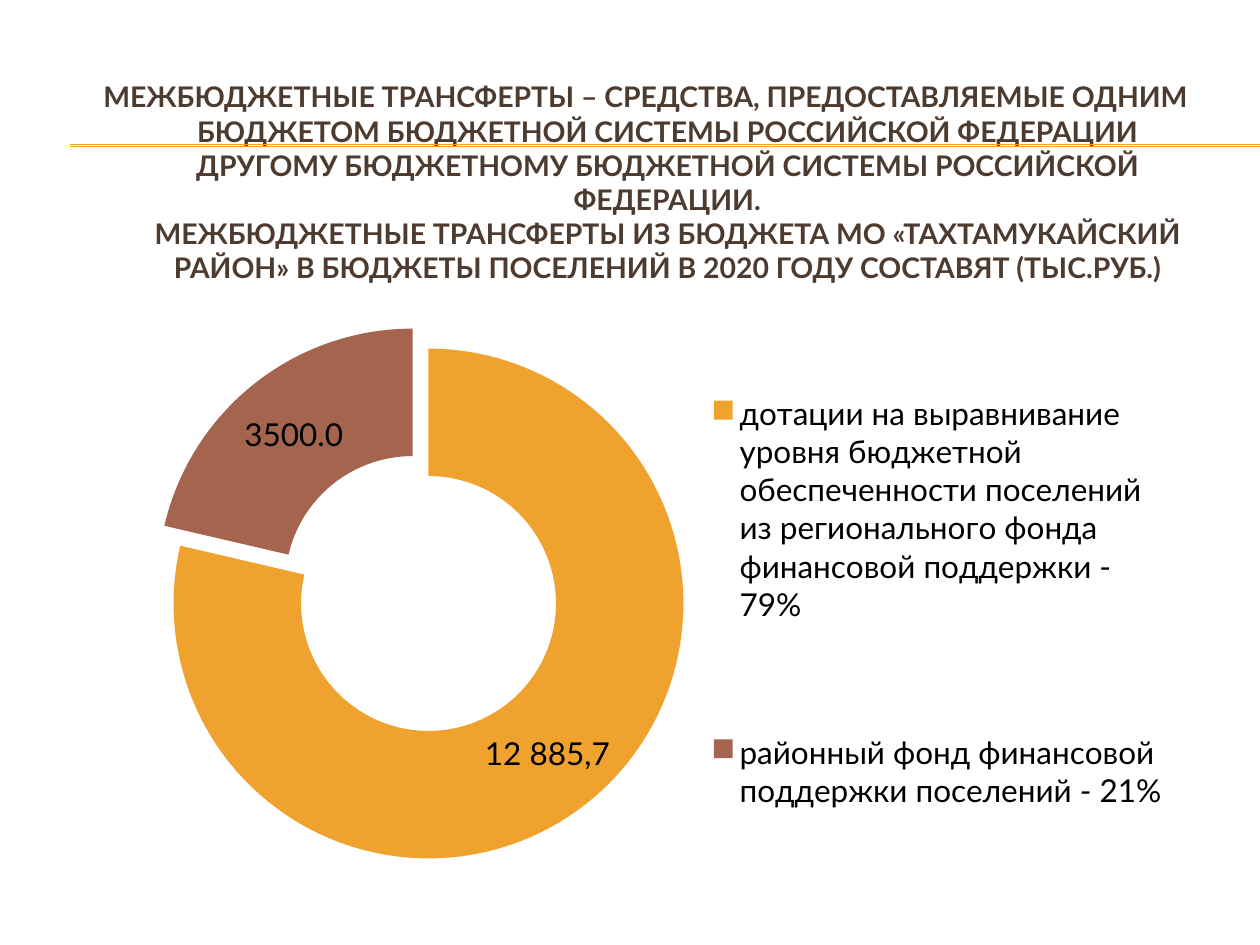
from lxml import etree
from pptx import Presentation
from pptx import util as u
from pptx.chart.data import CategoryChartData
from pptx.dml.color import RGBColor
from pptx.enum import chart as ch, shapes, text
from pptx.oxml import parse_xml
from pptx.oxml.ns import nsdecls, qn

# Content
FONT = "Lato"
TITLE = (
    "МЕЖБЮДЖЕТНЫЕ ТРАНСФЕРТЫ – СРЕДСТВА, ПРЕДОСТАВЛЯЕМЫЕ ОДНИМ БЮДЖЕТОМ "
    "БЮДЖЕТНОЙ СИСТЕМЫ РОССИЙСКОЙ ФЕДЕРАЦИИ ДРУГОМУ БЮДЖЕТНОМУ БЮДЖЕТНОЙ "
    "СИСТЕМЫ РОССИЙСКОЙ ФЕДЕРАЦИИ.\v"
    "МЕЖБЮДЖЕТНЫЕ ТРАНСФЕРТЫ ИЗ БЮДЖЕТА МО «ТАХТАМУКАЙСКИЙ РАЙОН» "
    "В БЮДЖЕТЫ ПОСЕЛЕНИЙ В 2020 ГОДУ СОСТАВЯТ (ТЫС.РУБ.)"
)
# category, value, colour, own label text
TRANSFERS = [
    ("дотации на выравнивание уровня бюджетной обеспеченности поселений из "
     "регионального фонда финансовой поддержки - 79%", 12885.7, "F0A22E", "12 885,7"),
    ("районный фонд финансовой поддержки поселений - 21%", 3500, "A5644E", None),
]
PLOT = (0.011, 0.078, 0.553, 0.817)
LEGEND = (0.56, 0.014, 0.43, 0.97)


def rgb(value):
    return RGBColor.from_string(value)


def style(font, size, color, bold=False):
    font.name, font.size, font.bold = FONT, u.Pt(size), bold
    font.color.rgb = rgb(color)


def write(tf, words, size, color, bold=False, align=text.PP_ALIGN.CENTER):
    p = tf.paragraphs[0]
    p.text, p.alignment = words, align
    for r in p.runs:
        style(r.font, size, color, bold)
    return p


def layout(box, inner=False):
    """Manual chart layout from fractions: left, top, width, height."""
    target = '<c:layoutTarget val="inner"/>' if inner else ""
    modes = '<c:xMode val="edge"/><c:yMode val="edge"/>'
    sizes = "".join(f'<c:{n} val="{v}"/>' for n, v in zip("xywh", box))
    return parse_xml(f'<c:layout {nsdecls("c")}><c:manualLayout>{target}{modes}{sizes}'
                     "</c:manualLayout></c:layout>")


prs = Presentation()
prs.slide_width, prs.slide_height = u.Cm(25.4), u.Cm(19.05)
s = prs.slides.add_slide(prs.slide_layouts[5])

# Double rule behind the title
for y in (2.92, 2.95):
    rule = s.shapes.add_connector(shapes.MSO_CONNECTOR.STRAIGHT,
                                  u.Cm(1.42), u.Cm(y), prs.slide_width, u.Cm(y))
    rule.line.color.rgb, rule.line.width = rgb("F0A22E"), u.Pt(0.75)
    etree.SubElement(rule._element.spPr, qn("a:effectLst"))

# Title
title = s.shapes.title
title.left, title.top, title.width, title.height = map(u.Cm, (1.5, 2.51, 23.01, 3))
tf = title.text_frame
tf.word_wrap, tf.auto_size = True, text.MSO_AUTO_SIZE.NONE
tf.vertical_anchor = text.MSO_ANCHOR.MIDDLE
tf.margin_bottom = u.Cm(0.82)
p = write(tf, TITLE, 16.2, "4E3B30", bold=True)
pPr = p._p.get_or_add_pPr()
pPr.set("marL", str(u.Cm(0.89)))
pPr.set("indent", str(u.Cm(-0.89)))

# Doughnut chart
names, values, colors, labels = zip(*TRANSFERS)
data = CategoryChartData(number_format="0.0")
data.categories = names
data.add_series("Series 1", values)
chart = s.shapes.add_chart(ch.XL_CHART_TYPE.DOUGHNUT_EXPLODED, u.Cm(2.31), u.Cm(5.54),
                           u.Cm(21.46), u.Cm(13.21), data).chart
chart.has_title = False
style(chart.font, 18, "000000")
plot = chart.plots[0]
plot.vary_by_categories = True
plot._element.find(qn("c:holeSize")).set("val", "50")
series = plot.series[0]
explosion = series._element.find(qn("c:explosion"))
if explosion is not None:
    explosion.set("val", "10")

# Value labels
plot.has_data_labels = True
dl = plot.data_labels
dl.show_value, dl.show_percentage = True, False
dl.number_format, dl.number_format_is_linked = "0.0", False
style(dl.font, 18, "000000")
for i, (color, label) in enumerate(zip(colors, labels)):
    point = series.points[i]
    point.format.fill.solid()
    point.format.fill.fore_color.rgb = rgb(color)
    point.format.line.fill.background()
    if label:
        write(point.data_label.text_frame, label, 18, "000000")
series_labels = series.data_labels
series_labels.show_value = True
series_labels.number_format, series_labels.number_format_is_linked = "0.0", False

# Legend and plot placement
chart.has_legend = True
legend = chart.legend
legend.position, legend.include_in_layout = ch.XL_LEGEND_POSITION.RIGHT, False
style(legend.font, 18, "000000")
for element, box, inner in ((plot._element.getparent(), PLOT, True),
                            (legend._element, LEGEND, False)):
    for old in element.findall(qn("c:layout")):
        element.remove(old)
    element.insert(0 if inner else 1, layout(box, inner))

prs.save("out.pptx")
